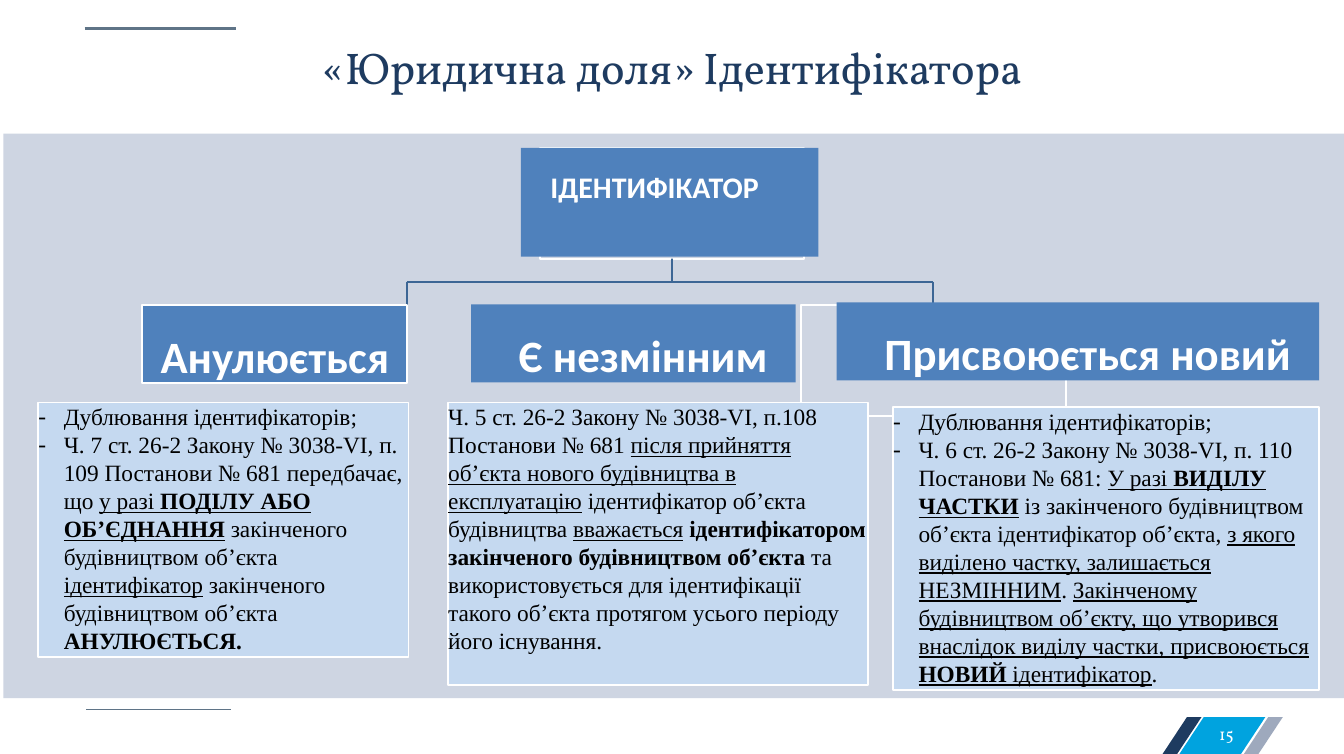
from pptx import Presentation
from pptx.dml.color import RGBColor
from pptx.enum.shapes import MSO_CONNECTOR, MSO_SHAPE
from pptx.enum.text import MSO_ANCHOR, PP_ALIGN
from pptx.oxml.ns import qn
from pptx.util import Inches, Pt
from lxml.etree import SubElement

COLORS = {
    "navy": "1E3B60", "cyan": "00A3DF", "gray": "9EA9BD", "rule": "5F7487",
    "panel": "CED5E2", "head": "4F81BC", "body": "C5D9F0", "tree": "3C6695",
    "white": "FFFFFF", "black": "000000",
}
RGB = {name: RGBColor.from_string(code) for name, code in COLORS.items()}

prs = Presentation()
prs.slide_width, prs.slide_height = Inches(20), Inches(11.22)
slide = prs.slides.add_slide(prs.slide_layouts[5])
shapes = slide.shapes


def add_box(pos, fill=None, line=None, top=0, kind=MSO_SHAPE.RECTANGLE):
    """Add a flat shape; top is the inset above its text."""
    box = shapes.add_shape(kind, *map(Inches, pos))
    box.shadow.inherit = False
    if fill:
        box.fill.solid()
        box.fill.fore_color.rgb = RGB[fill]
    else:
        box.fill.background()
    if line:
        box.line.color.rgb = RGB[line]
        box.line.width = Pt(2.04)
    else:
        box.line.fill.background()
    frame = box.text_frame
    frame.word_wrap = True
    frame.vertical_anchor = MSO_ANCHOR.TOP
    frame.margin_left = frame.margin_right = frame.margin_bottom = 0
    frame.margin_top = Inches(top)
    frame.paragraphs[0].alignment = PP_ALIGN.LEFT
    return box


def add_line(x1, y1, x2, y2, color, width):
    line = shapes.add_connector(MSO_CONNECTOR.STRAIGHT, *map(Inches, (x1, y1, x2, y2)))
    line.line.color.rgb = RGB[color]
    line.line.width = Pt(width)
    SubElement(line._element.spPr, qn("a:effectLst"))
    return line


# Page frame
for left, width, color in [(18.51, 0.58, "gray"), (17.55, 1.28, "cyan"), (17.3, 0.58, "navy")]:
    flag = add_box((left, 10.67, width, 0.55), color, kind=MSO_SHAPE.PARALLELOGRAM)
    flag.adjustments[0] = 0.66
add_line(1.28, 10.56, 3.44, 10.56, "rule", 0.96)
add_line(1.26, 0.43, 3.51, 0.43, "rule", 3)
add_box((0.05, 1.99, 19.95, 8.4), "panel")

# Title
title = shapes.title
title.left, title.top, title.width, title.height = map(Inches, (1.27, 0.57, 17.47, 0.83))
frame = title.text_frame
frame.text = "«Юридична доля» Ідентифікатора"
frame.vertical_anchor = MSO_ANCHOR.TOP
frame.margin_left = frame.margin_right = frame.margin_bottom = 0
frame.margin_top = Inches(0.02)
frame.paragraphs[0].alignment = PP_ALIGN.CENTER
font = frame.paragraphs[0].runs[0].font
font.name, font.size, font.color.rgb = "Vollkorn", Pt(47.5), RGB["navy"]

# Tree
root = add_box((8.03, 2.2, 3.94, 1.65), line="white")
stem = add_line(10, 3.85, 10, 4.19, "tree", 2.04)
stem.begin_connect(root, 2)
add_line(6.05, 4.19, 13.89, 4.19, "tree", 2.04)
for x in (6.05, 13.89):
    add_line(x, 4.19, x, 4.54, "tree", 2.04)
add_box((11.92, 4.54, 3.94, 1.65), line="white")

# Headings: text, position, outline, top inset, indent, size
heads = [
    ("ІДЕНТИФІКАТОР", (7.75, 2.2, 4.43, 1.62), None, 0.31, 0.44, 32),
    ("Анулюється", (2.12, 4.54, 3.94, 1.16), "white", 0.35, 0.27, 48),
    ("Є незмінним", (7.01, 4.53, 4.83, 1.16), None, 0.35, 0.71, 48),
    ("Присвоюється новий", (12.45, 4.5, 7.18, 1.16), None, 0.35, 0.71, 48),
]
for text, pos, line, top, indent, size in heads:
    frame = add_box(pos, "head", line, top).text_frame
    frame.margin_left = Inches(indent)
    frame.text = text
    font = frame.paragraphs[0].runs[0].font
    font.name, font.size, font.bold = "Calibri", Pt(size), True
    font.color.rgb = RGB["white"]

# Details: position, bulleted, paragraphs of (text, style); b is bold, u underlined
first = [("Дублювання ідентифікаторів;", "")]
details = [
    ((0.57, 5.99, 5.51, 3.79), True, [first, [
        ("Ч. 7 ст. 26-2 Закону № 3038-VІ, п. 109 Постанови № 681 передбачає, що ", ""),
        ("у разі ", "u"),
        ("ПОДІЛУ АБО ОБ’ЄДНАННЯ", "bu"),
        (" закінченого будівництвом об’єкта ", ""),
        ("ідентифікатор", "u"),
        (" закінченого будівництвом об’єкта ", ""),
        ("АНУЛЮЄТЬСЯ.", "b"),
    ]]),
    ((6.67, 5.99, 6.25, 4.21), False, [[
        ("Ч. 5 ст. 26-2 Закону № 3038-VІ, п.108 Постанови № 681 ", ""),
        ("після прийняття об’єкта нового будівництва в експлуатацію", "u"),
        (" ідентифікатор об’єкта будівництва ", ""),
        ("вважається", "u"),
        (" ", ""),
        ("ідентифікатором закінченого будівництвом об’єкта", "b"),
        (" та використовується для ідентифікації такого об’єкта "
         "протягом усього періоду його існування.", ""),
    ]]),
    ((13.29, 6.06, 6.34, 4.21), True, [first, [
        ("Ч. 6 ст. 26-2 Закону № 3038-VІ, п. 110 Постанови № 681: ", ""),
        ("У разі ", "u"),
        ("ВИДІЛУ ЧАСТКИ", "bu"),
        (" із закінченого будівництвом об’єкта ідентифікатор об’єкта, ", ""),
        ("з якого виділено частку, залишається НЕЗМІННИМ", "u"),
        (". ", ""),
        ("Закінченому будівництвом об’єкту, що утворився "
         "внаслідок виділу частки, присвоюється ", "u"),
        ("НОВИЙ", "bu"),
        (" ідентифікатор", "u"),
        (".", ""),
    ]]),
]
for pos, dashed, paras in details:
    frame = add_box(pos, "body", "white").text_frame
    for i, runs in enumerate(paras):
        para = frame.paragraphs[0] if i == 0 else frame.add_paragraph()
        para.alignment = PP_ALIGN.LEFT
        if dashed:
            props = para._p.get_or_add_pPr()
            props.set("marL", str(Inches(0.38)))
            props.set("indent", str(-Inches(0.38)))
            SubElement(props, qn("a:buFont"), typeface="Times New Roman")
            SubElement(props, qn("a:buChar"), char="-")
        for text, style in runs:
            run = para.add_run()
            run.text = text
            font = run.font
            font.name, font.size, font.color.rgb = "Times New Roman", Pt(25), RGB["black"]
            font.bold, font.underline = "b" in style, "u" in style

# Page number
page = shapes.add_textbox(*map(Inches, (18.02, 10.82, 0.48, 0.25)))
frame = page.text_frame
frame.word_wrap = True
frame.margin_right = frame.margin_top = frame.margin_bottom = 0
frame.margin_left = Inches(0.12)
frame.text = "15"
frame.paragraphs[0].line_spacing = Pt(17.8)
font = frame.paragraphs[0].runs[0].font
font.name, font.size, font.color.rgb = "Vollkorn", Pt(18), RGB["white"]

prs.save("out.pptx")
